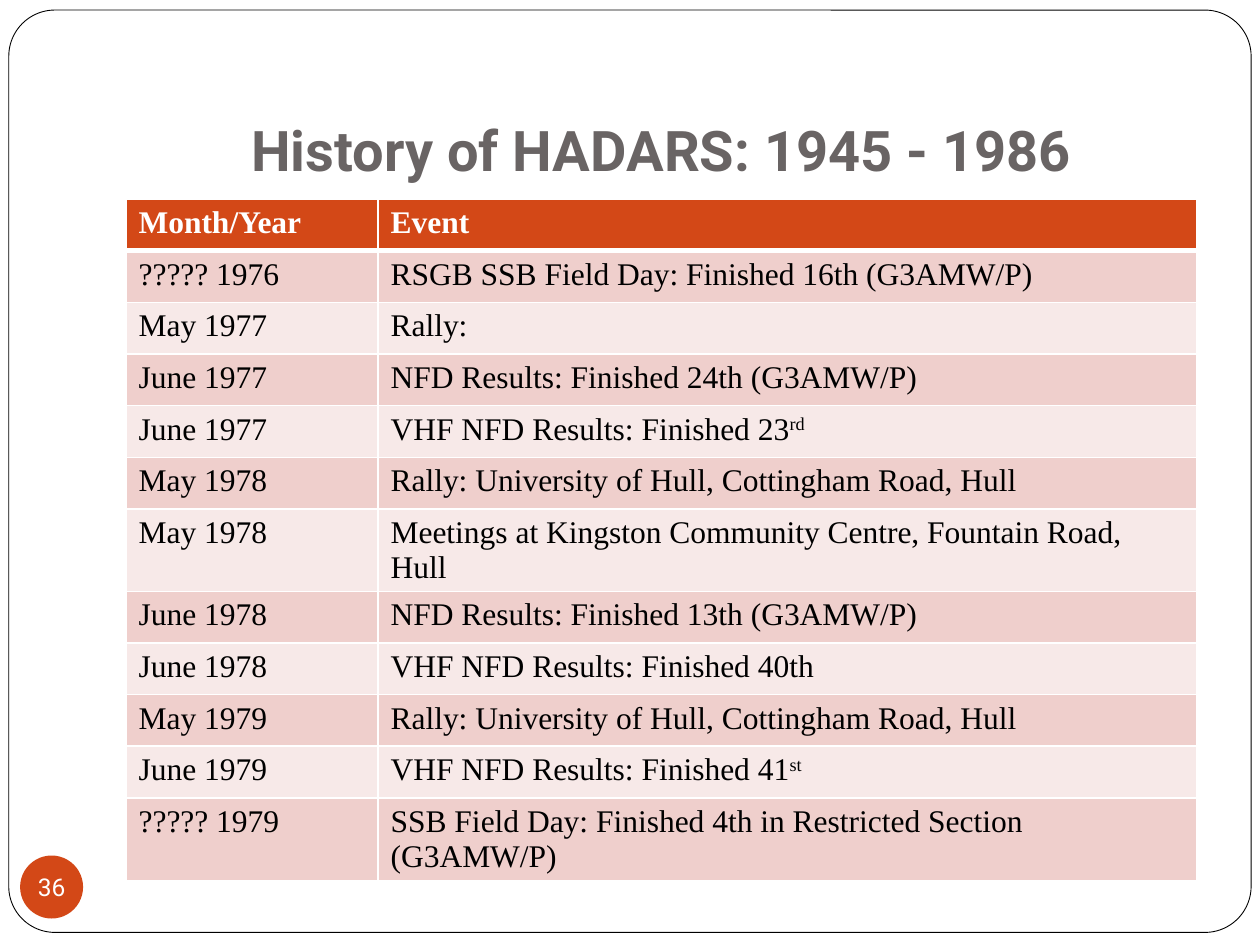
import pptx
import pptx.util
import pptx.dml.color
import pptx.enum.shapes
import pptx.enum.text
import pptx.oxml
import pptx.oxml.ns

PX = 9144  # 100 px to the inch
RED, WHITE, BLACK, GREY = "D34817", "FFFFFF", "000000", "696464"
BANDS = ("EFCFCC", "F7E9E8")
SERIF, SANS = "Times New Roman", "Roboto"
SHAPE = pptx.enum.shapes.MSO_SHAPE
ALIGN = pptx.enum.text.PP_ALIGN
ANCHOR = pptx.enum.text.MSO_ANCHOR

# Each event is a list of text parts; every second part is raised.
EVENTS = [
    ("????? 1976", ["RSGB SSB Field Day: Finished 16th (G3AMW/P)"]),
    ("May 1977", ["Rally:"]),
    ("June 1977", ["NFD Results: Finished 24th (G3AMW/P)"]),
    ("June 1977", ["VHF NFD Results: Finished 23", "rd"]),
    ("May 1978", ["Rally: University of Hull, Cottingham Road, Hull"]),
    ("May 1978", ["Meetings at Kingston Community Centre, Fountain Road, Hull"]),
    ("June 1978", ["NFD Results: Finished 13th (G3AMW/P)"]),
    ("June 1978", ["VHF NFD Results: Finished 40th"]),
    ("May 1979", ["Rally: University of Hull, Cottingham Road, Hull"]),
    ("June 1979", ["VHF NFD Results: Finished 41", "st"]),
    ("????? 1979", ["SSB Field Day: Finished 4th in Restricted Section (G3AMW/P)"]),
]


def px(*nums):
    return [pptx.util.Emu(n * PX) for n in nums]


def color(code):
    return pptx.dml.color.RGBColor.from_string(code)


def paint(item, code):
    item.fill.solid()
    item.fill.fore_color.rgb = color(code)


def write(frame, parts, size=18, font=SERIF, ink=BLACK, bold=False, align=ALIGN.LEFT):
    para = frame.paragraphs[0]
    para.alignment = align
    for i, part in enumerate(parts):
        run = para.add_run()
        run.text = part
        run.font.size = pptx.util.Pt(size)
        run.font.name = font
        run.font.bold = bold
        run.font.color.rgb = color(ink)
        if i % 2:
            run._r.get_or_add_rPr().set("baseline", "30000")


def inset(frame, left, top, right, bottom):
    (frame.margin_left, frame.margin_top,
     frame.margin_right, frame.margin_bottom) = px(left, top, right, bottom)


def shape(slide, kind, box, fill):
    item = slide.shapes.add_shape(kind, *px(*box))
    item.shadow.inherit = False
    paint(item, fill)
    item.line.fill.background()
    return item


def border(cell, top=1, bottom=1):
    props = cell._tc.get_or_add_tcPr()
    sides = {"L": 1, "R": 1, "T": top, "B": bottom}
    for i, (side, width) in enumerate(sides.items()):
        props.insert(i, pptx.oxml.parse_xml(
            f'<a:ln{side} {pptx.oxml.ns.nsdecls("a")} w="{width * 12700}">'
            f'<a:solidFill><a:srgbClr val="{WHITE}"/></a:solidFill></a:ln{side}>'))


def outline(slide):
    item = shape(slide, SHAPE.ROUNDED_RECTANGLE, (7, 8, 986, 732), WHITE)
    item.adjustments[0] = 0.05
    item.line.color.rgb = color(BLACK)
    item.line.width = pptx.util.Pt(0.5)
    slide.shapes._spTree.insert(2, item._element)  # behind the title


def title(slide, text):
    item = slide.shapes.title
    item.left, item.top, item.width, item.height = px(100, 30, 850, 125)
    frame = item.text_frame
    frame.vertical_anchor = ANCHOR.BOTTOM
    inset(frame, 10, 5, 10, 10)
    write(frame, [text], size=32, font=SANS, ink=GREY, bold=True, align=ALIGN.CENTER)


def table(slide):
    rows = [("Month/Year", ["Event"])] + EVENTS
    high = 41
    grid = slide.shapes.add_table(
        len(rows), 2, *px(100, 158, 850, high * len(rows))).table
    for col, wide in zip(grid.columns, px(200, 650)):
        col.width = wide
    for r, (date, event) in enumerate(rows):
        grid.rows[r].height = px(high)[0]
        head = r == 0
        for c, parts in enumerate(([date], event)):
            cell = grid.cell(r, c)
            paint(cell, RED if head else BANDS[(r - 1) % 2])
            border(cell, top=3 if r == 1 else 1, bottom=3 if head else 1)
            write(cell.text_frame, parts, ink=WHITE if head else BLACK, bold=head)


def badge(slide, text):
    item = shape(slide, SHAPE.OVAL, (16, 679, 50, 50), RED)
    frame = item.text_frame
    frame.word_wrap = False
    frame.vertical_anchor = ANCHOR.MIDDLE
    inset(frame, 0, 0, 0, 0)
    write(frame, [text], size=14, font=SANS, ink=WHITE, align=ALIGN.CENTER)


def main():
    deck = pptx.Presentation()
    deck.slide_width, deck.slide_height = px(1000, 750)
    slide = deck.slides.add_slide(deck.slide_layouts[5])
    outline(slide)
    title(slide, "History of HADARS: 1945 - 1986")
    table(slide)
    badge(slide, "36")
    deck.save("out.pptx")


if __name__ == "__main__":
    main()
